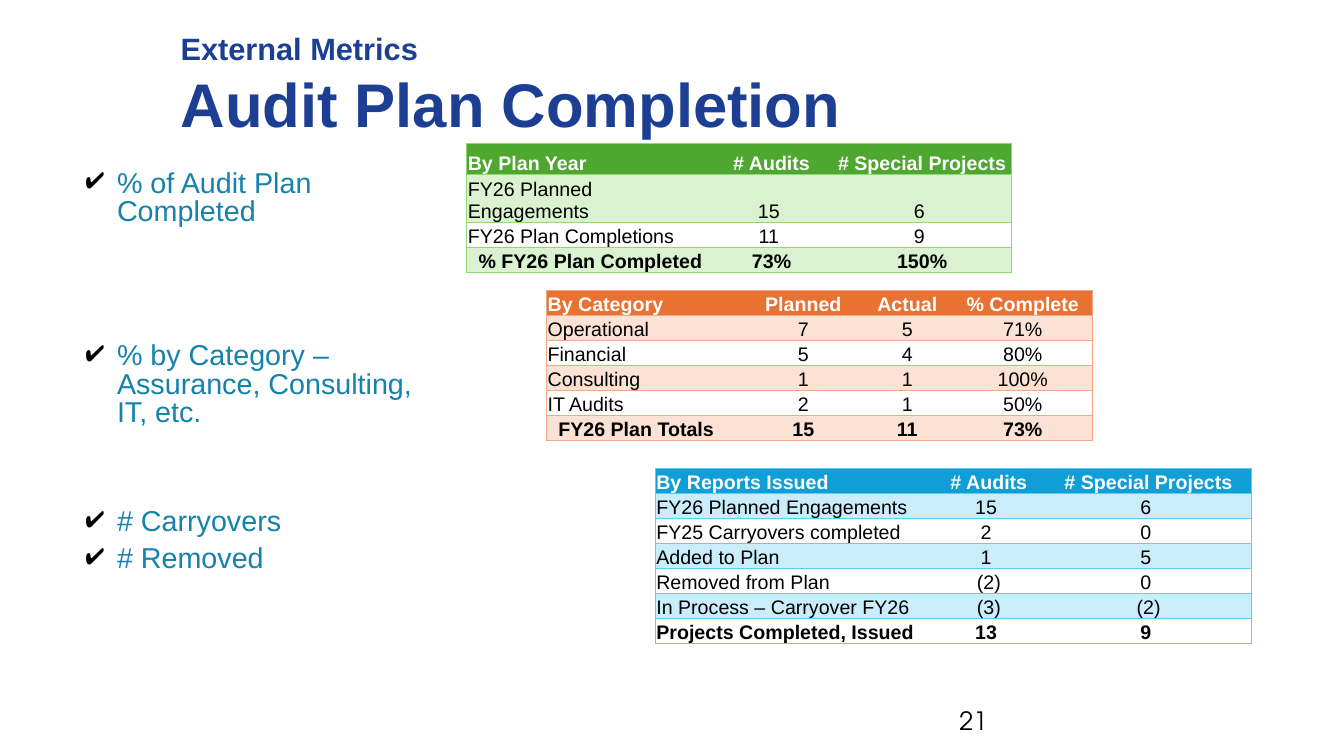
from lxml import etree
from pptx import Presentation
from pptx import util as u
from pptx.dml import color
from pptx.enum import text
from pptx.oxml import ns


def paint(value):
    return color.RGBColor.from_string(value)


def style(para, size, hue, bold=False, face="Arial"):
    for name, value in {"size": u.Pt(size), "bold": bold, "name": face}.items():
        setattr(para.font, name, value)
    para.font.color.rgb = paint(hue)


deck = Presentation()
deck.slide_width, deck.slide_height = u.Cm(33.87), u.Cm(19.05)
page = deck.slides.add_slide(deck.slide_layouts[5])

title = page.shapes.title
title.left, title.top, title.width, title.height = map(u.Cm, (4.55, 0.94, 27.43, 2.39))
frame = title.text_frame
frame_format = {
    "auto_size": text.MSO_AUTO_SIZE.NONE,
    "vertical_anchor": text.MSO_ANCHOR.MIDDLE,
    "margin_left": 0,
    "margin_top": 0,
    "margin_bottom": 0,
}
for name, value in frame_format.items():
    setattr(frame, name, value)
frame.text = "External Metrics\nAudit Plan Completion"
for para, size in zip(frame.paragraphs, (22, 44)):
    para.alignment = text.PP_ALIGN.LEFT
    style(para, size, "1C3F94", True)

metrics = [
    ("% of Audit Plan Completed", 0),
    ("% by Category – Assurance, Consulting, IT, etc.", 82.5),
    ("# Carryovers", 57.5),
    ("# Removed", 6),
]
box = page.shapes.add_textbox(*map(u.Cm, (1.91, 4.29, 9.27, 11.07)))
frame = box.text_frame
frame.word_wrap = True
frame.margin_top = frame.margin_bottom = 0
frame.text = "\n".join(label for label, gap in metrics)
for para, (label, gap) in zip(frame.paragraphs, metrics):
    para.line_spacing = 0.83
    para.space_before = u.Pt(gap)
    layout = para._p.get_or_add_pPr()
    layout.set("marL", str(u.Cm(0.79)))
    layout.set("indent", str(u.Cm(-0.97)))
    bullet_color = etree.SubElement(layout, ns.qn("a:buClr"))
    etree.SubElement(bullet_color, ns.qn("a:srgbClr"), val="000000")
    etree.SubElement(layout, ns.qn("a:buChar"), char="✔")
    style(para, 20.5, "1482AB")

box = page.shapes.add_textbox(*map(u.Cm, (23.93, 17.65, 7.62, 1.02)))
frame = box.text_frame
frame.word_wrap = True
frame.vertical_anchor = text.MSO_ANCHOR.MIDDLE
frame.text = "21"
style(frame.paragraphs[0], 18, "000000", face="TeX Gyre Adventor")

tables = [
    {
        "place": (11.76, 3.61),
        "widths": (6.15, 3.07, 4.52),
        "heights": (0.79, 1.13, 0.58, 0.58),
        "colors": ("4EA72E", "DAF2D0", "8ED973"),
        "total_inset": 0.3,
        "rows": [
            ("By Plan Year", "# Audits", "# Special Projects"),
            ("FY26 Planned Engagements", "15 ", "6 "),
            ("FY26 Plan Completions", "11 ", "9 "),
            ("% FY26 Plan Completed", "73%", "150%"),
        ],
    },
    {
        "place": (13.77, 7.32),
        "widths": (5, 2.95, 2.29, 3.53),
        "heights": (0.63,) * 6,
        "colors": ("E97132", "FBE2D5", "F1A983"),
        "total_inset": 0.3,
        "rows": [
            ("By Category", "Planned", "Actual", "% Complete"),
            ("Operational", "7", "5", "71%"),
            ("Financial", "5", "4", "80%"),
            ("Consulting", "1", "1", "100%"),
            ("IT Audits", "2", "1", "50%"),
            ("FY26 Plan Totals", "15", "11", "73%"),
        ],
    },
    {
        "place": (16.51, 11.81),
        "widths": (6.99, 2.84, 5.21),
        "heights": (0.63,) * 7,
        "colors": ("0F9ED5", "CAEDFB", "61CBF3"),
        "total_inset": 0.03,
        "rows": [
            ("By Reports Issued", "# Audits", "# Special Projects"),
            ("FY26 Planned Engagements", "15 ", "6 "),
            ("FY25 Carryovers completed", "2 ", "0 "),
            ("Added to Plan", "1 ", "5 "),
            ("Removed from Plan", "(2)", "0 "),
            ("In Process – Carryover FY26", "(3)", "(2)"),
            ("Projects Completed, Issued", "13 ", "9 "),
        ],
    },
]

for item in tables:
    rows, widths, heights = item["rows"], item["widths"], item["heights"]
    header_fill, band_fill, border = item["colors"]
    last_row, last_column = len(rows) - 1, len(widths) - 1
    size = sum(widths), sum(heights)
    graphic = page.shapes.add_table(len(rows), len(widths), *map(u.Cm, item["place"] + size))
    table = graphic.table
    plain_style = "{2D5ABB26-0587-4C30-8999-92F81FD0307C}"
    table._tbl.tblPr.find(ns.qn("a:tableStyleId")).text = plain_style
    for column, width in zip(table.columns, widths):
        column.width = u.Cm(width)
    for r, values in enumerate(rows):
        table.rows[r].height = u.Cm(heights[r])
        for c, value in enumerate(values):
            cell = table.cell(r, c)
            cell.text = value
            inset = item["total_inset"] if r == last_row and c == 0 else 0.03
            cell_format = {
                "vertical_anchor": text.MSO_ANCHOR.BOTTOM,
                "margin_left": u.Cm(inset),
                "margin_right": u.Cm(0.03),
                "margin_top": u.Cm(0.03),
                "margin_bottom": 0,
            }
            for name, setting in cell_format.items():
                setattr(cell, name, setting)
            para = cell.text_frame.paragraphs[0]
            para.alignment = text.PP_ALIGN.CENTER if c else text.PP_ALIGN.LEFT
            style(para, 14, "000000" if r else "FFFFFF", r in (0, last_row))
            sides = ["lnL"] * (c == 0) + ["lnR"] * (c == last_column) + ["lnT", "lnB"]
            for side in sides:
                line = etree.SubElement(cell._tc.get_or_add_tcPr(), ns.qn(f"a:{side}"), w=str(u.Pt(0.75)))
                solid = etree.SubElement(line, ns.qn("a:solidFill"))
                etree.SubElement(solid, ns.qn("a:srgbClr"), val=border)
            if r == 0 or r % 2:
                cell.fill.solid()
                cell.fill.fore_color.rgb = paint(band_fill if r else header_fill)
            else:
                cell.fill.background()

deck.save("out.pptx")
